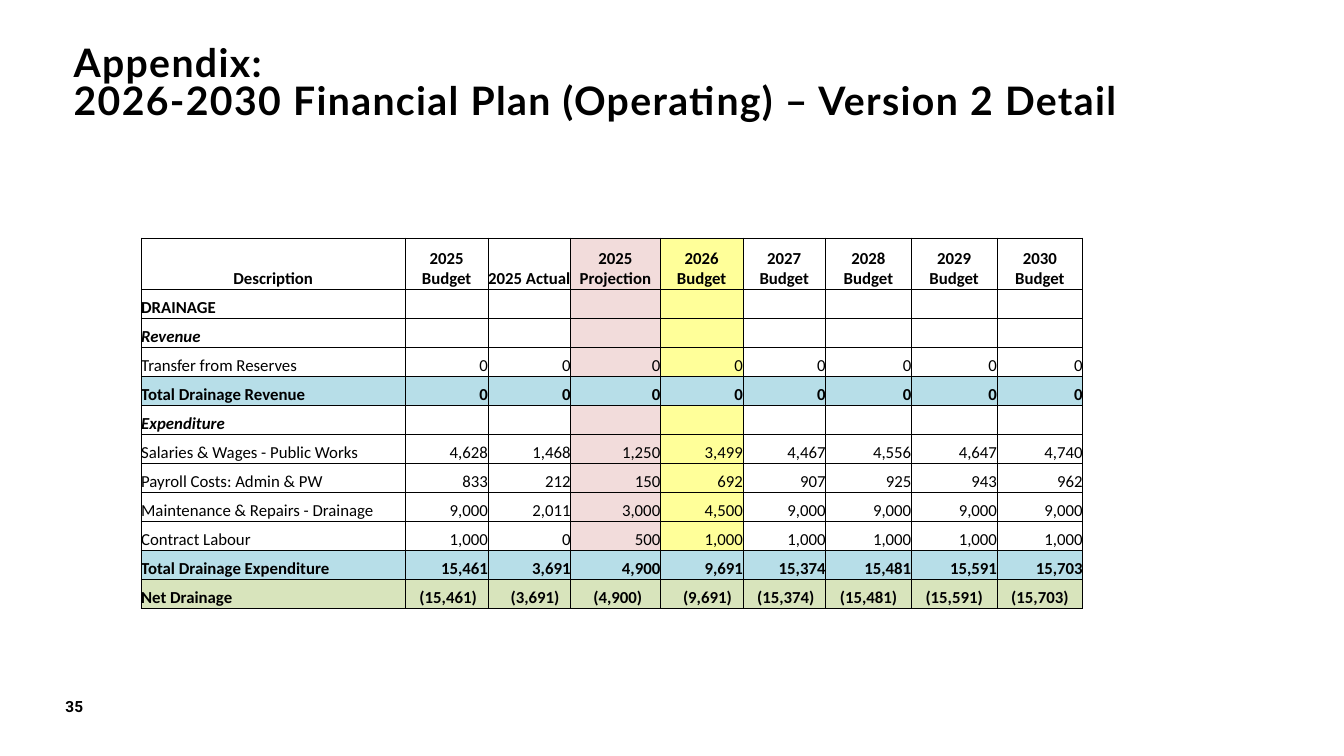
from lxml import etree
from pptx import Presentation, util as u
from pptx.dml.color import RGBColor
from pptx.enum import text
from pptx.oxml.ns import qn

TITLE = "Appendix:\v2026-2030 Financial Plan (Operating) – Version 2 Detail"
PAGE_NUMBER = "35"
HEADERS = ["Description", "2025 Budget", "2025 Actual", "2025 Projection", "2026 Budget",
           "2027 Budget", "2028 Budget", "2029 Budget", "2030 Budget"]
# Row kind, description, then one figure per year column
ROWS = [
    ("section", "DRAINAGE", ""),
    ("group", "Revenue", ""),
    ("item", "Transfer from Reserves", "0 0 0 0 0 0 0 0"),
    ("total", "Total Drainage Revenue", "0 0 0 0 0 0 0 0"),
    ("group", "Expenditure", ""),
    ("item", "Salaries & Wages - Public Works", "4,628 1,468 1,250 3,499 4,467 4,556 4,647 4,740"),
    ("item", "Payroll Costs: Admin & PW", "833 212 150 692 907 925 943 962"),
    ("item", "Maintenance & Repairs - Drainage", "9,000 2,011 3,000 4,500 9,000 9,000 9,000 9,000"),
    ("item", "Contract Labour", "1,000 0 500 1,000 1,000 1,000 1,000 1,000"),
    ("total", "Total Drainage Expenditure", "15,461 3,691 4,900 9,691 15,374 15,481 15,591 15,703"),
    ("net", "Net Drainage",
     "(15,461) (3,691) (4,900) (9,691) (15,374) (15,481) (15,591) (15,703)"),
]

COLUMN_WIDTHS = [2.62, 0.82, 0.82, 0.89, 0.82, 0.82, 0.85, 0.85, 0.85]
TABLE_LEFT, TABLE_TOP, TABLE_HEIGHT, HEADER_HEIGHT = 1.4, 2.36, 3.68, 0.51
NET_FIGURE_END = 0.71  # distance from the column's left edge
ROW_FILLS = {"total": "B7DEE8", "net": "D8E4BC"}
COLUMN_FILLS = {3: "F2DCDB", 4: "FFFF99"}
BLACK = "000000"
MARGINS = ("margin_left", "margin_top", "margin_right", "margin_bottom")
TITLE_FONT = {"name": "Lato", "size": u.Pt(28), "bold": True}
NUMBER_FONT = {"name": "Roboto", "size": u.Pt(11), "bold": True}
CELL_FONT = {"name": "Calibri", "size": u.Pt(12)}
ALIGN = text.PP_ALIGN


def color(hex_value):
    return RGBColor.from_string(hex_value)


def format_run(run, values):
    for name, value in values.items():
        setattr(run.font, name, value)
    run.font.color.rgb = color(BLACK)


def clear_margins(target):
    for margin in MARGINS:
        setattr(target, margin, 0)


def add_borders(cell, widths):
    """Draw black borders; widths are points for left, right, top and bottom."""
    properties = cell._tc.get_or_add_tcPr()
    for side, width in zip("LRTB", widths):
        line = etree.SubElement(properties, qn(f"a:ln{side}"), w=str(u.Pt(width)))
        fill = etree.SubElement(line, qn("a:solidFill"))
        etree.SubElement(fill, qn("a:srgbClr"), val=BLACK)


def fill_cell(cell, content, fill, alignment, font, borders):
    clear_margins(cell)
    cell.vertical_anchor = text.MSO_ANCHOR.BOTTOM
    add_borders(cell, borders)
    if fill:
        cell.fill.solid()
        cell.fill.fore_color.rgb = color(fill)
    else:
        cell.fill.background()
    paragraph = cell.text_frame.paragraphs[0]
    paragraph.alignment = alignment
    if content:
        run = paragraph.add_run()
        run.text = content
        format_run(run, font)
    else:
        etree.SubElement(paragraph._p, qn("a:endParaRPr"), sz="1200")


def add_title(slide):
    title = slide.shapes.title
    title.left, title.top, title.width, title.height = map(u.Inches, (0.73, -0.12, 11.57, 1.34))
    frame = title.text_frame
    clear_margins(frame)
    frame.vertical_anchor = text.MSO_ANCHOR.BOTTOM
    frame.text = TITLE
    paragraph = frame.paragraphs[0]
    paragraph.alignment = ALIGN.LEFT
    paragraph.line_spacing = 0.8
    for run in paragraph.runs:
        format_run(run, TITLE_FONT)
        run._r.get_or_add_rPr().set("spc", "100")


def add_budget_table(slide):
    rows = [("header", HEADERS)]
    for kind, description, figures in ROWS:
        rows.append((kind, [description] + (figures.split() or [""] * (len(HEADERS) - 1))))
    frame = slide.shapes.add_table(
        len(rows), len(HEADERS), u.Inches(TABLE_LEFT), u.Inches(TABLE_TOP),
        u.Inches(sum(COLUMN_WIDTHS)), u.Inches(TABLE_HEIGHT))
    table = frame.table
    table.first_row = table.horz_banding = False
    for column, width in zip(table.columns, COLUMN_WIDTHS):
        column.width = u.Inches(width)
    body_height = (TABLE_HEIGHT - HEADER_HEIGHT) / len(ROWS)

    for i, (kind, contents) in enumerate(rows):
        table.rows[i].height = u.Inches(HEADER_HEIGHT if kind == "header" else body_height)
        font = dict(CELL_FONT, bold=kind != "item", italic=kind == "group")
        above_total = i + 1 < len(rows) and rows[i + 1][0] == "total"
        borders = (0.5, 0.5, 1 if kind == "total" else 0.5, 1 if above_total else 0.5)
        for j, content in enumerate(contents):
            cell = table.cell(i, j)
            alignment = ALIGN.CENTER if kind == "header" else ALIGN.RIGHT if j else ALIGN.LEFT
            fill = ROW_FILLS.get(kind) or COLUMN_FILLS.get(j)
            fill_cell(cell, content, fill, alignment, font, borders)
            if kind == "net" and j:
                cell.margin_right = u.Inches(COLUMN_WIDTHS[j] - NET_FIGURE_END)


def add_page_number(slide):
    box = slide.shapes.add_textbox(*map(u.Inches, (0.65, 6.92, 0.57, 0.27)))
    frame = box.text_frame
    frame.word_wrap = True
    clear_margins(frame)
    run = frame.paragraphs[0].add_run()
    run.text = PAGE_NUMBER
    format_run(run, NUMBER_FONT)


def main():
    presentation = Presentation()
    presentation.slide_width, presentation.slide_height = u.Inches(13.33), u.Inches(7.5)
    slide = presentation.slides.add_slide(presentation.slide_layouts.get_by_name("Title Only"))
    add_title(slide)
    add_budget_table(slide)
    add_page_number(slide)
    presentation.save("out.pptx")


if __name__ == "__main__":
    main()
